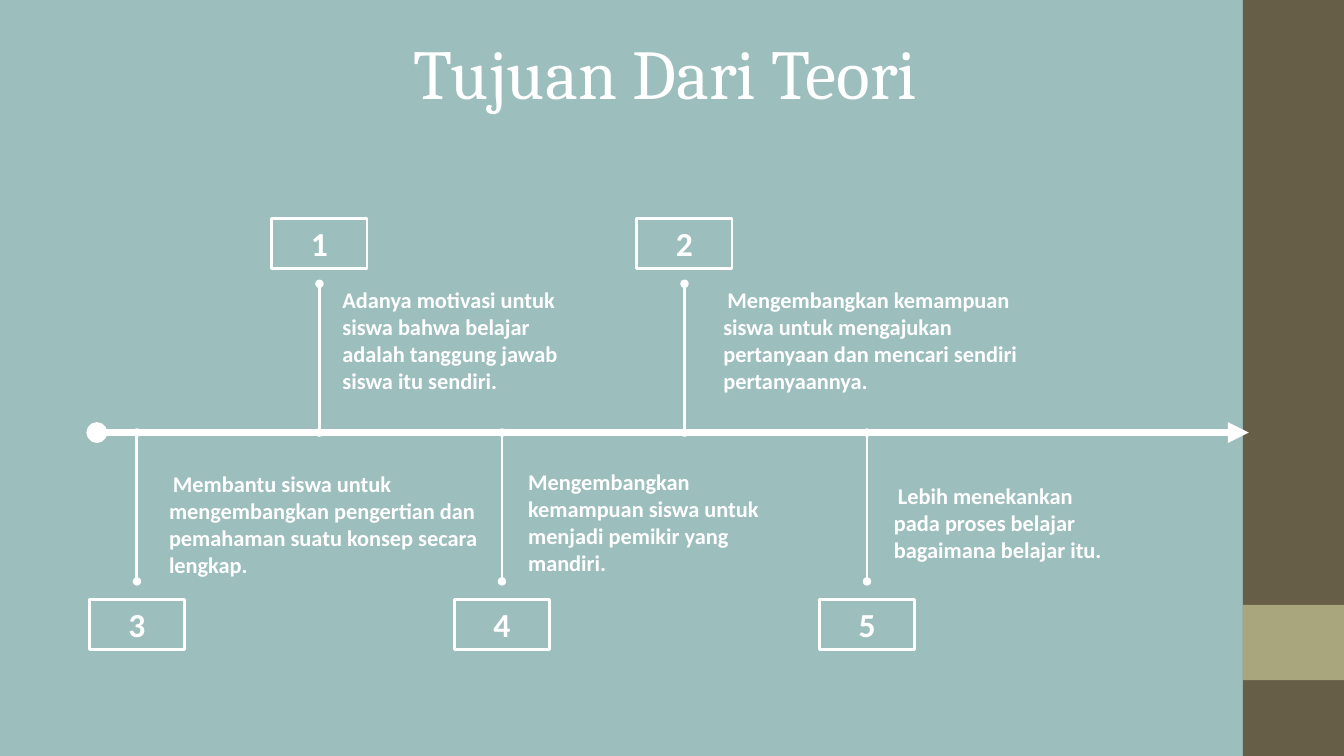
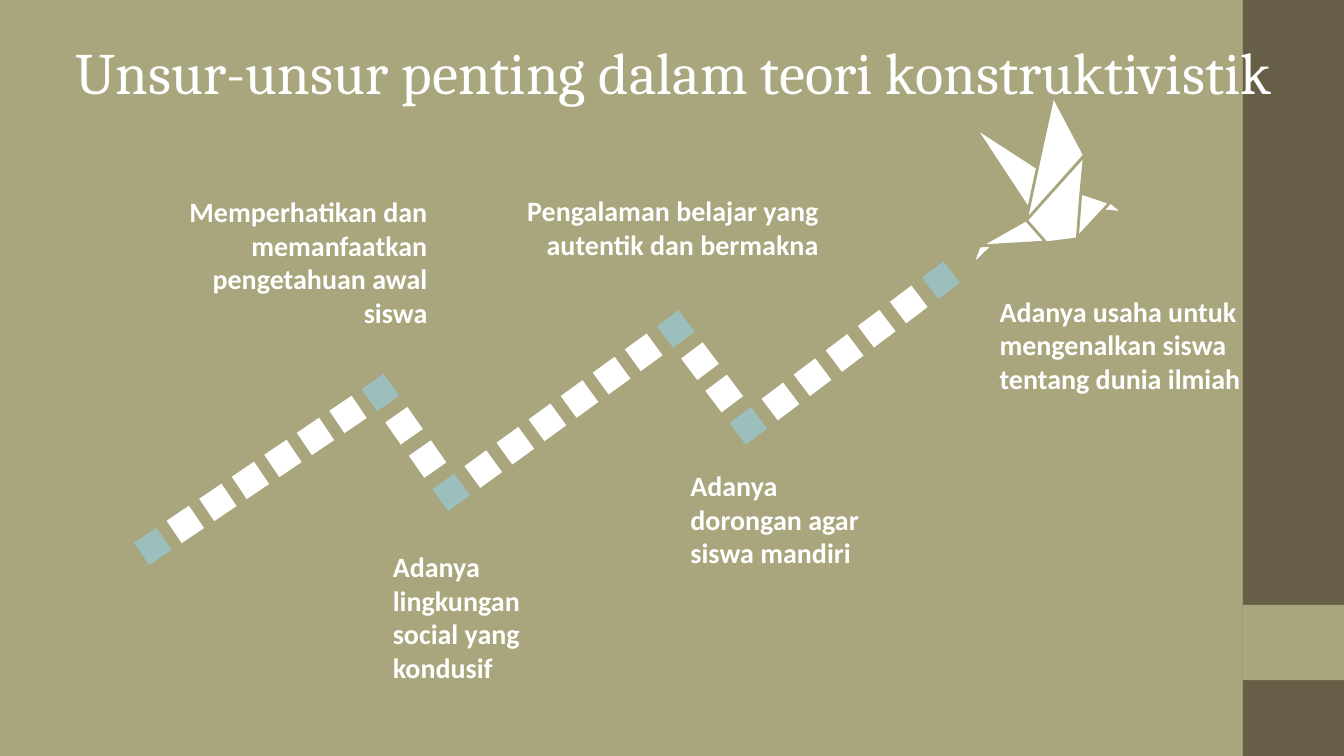
from lxml import etree
from pptx import Presentation
from pptx import util as u
from pptx.dml.color import RGBColor
from pptx.enum import shapes, text
from pptx.oxml.ns import qn

WHITE, TEAL, OLIVE, BROWN = "FFFFFF", "9CBEBD", "A9A57C", "675E47"
TITLE_FONT, BODY_FONT = "Cambria", "Calibri"
LEFT, CENTER, RIGHT = text.PP_ALIGN.LEFT, text.PP_ALIGN.CENTER, text.PP_ALIGN.RIGHT
TOP, MIDDLE = text.MSO_ANCHOR.TOP, text.MSO_ANCHOR.MIDDLE
RECTANGLE = shapes.MSO_SHAPE.RECTANGLE
WIDTH, HEIGHT = 33.87, 19.05


def color(hex_string):
    return RGBColor.from_string(hex_string)


class Deck:
    """Holds the shared style and the current slide; lengths are in cm."""

    def __init__(self):
        self.presentation = Presentation()
        self.presentation.slide_width = u.Cm(WIDTH)
        self.presentation.slide_height = u.Cm(HEIGHT)
        self.slide = None

    def new_slide(self, background, title, size):
        self.slide = self.presentation.slides.add_slide(self.presentation.slide_layouts[6])
        fill = self.slide.background.fill
        fill.solid()
        fill.fore_color.rgb = color(background)
        # Side band with its accent
        self.rectangle(31.32, 0, 2.55, HEIGHT, BROWN)
        self.rectangle(31.32, 15.24, 2.55, 1.9, OLIVE)
        self.textbox(0.89, 0.79, 32.16, 2, title, size, CENTER, MIDDLE,
                     font=TITLE_FONT, bold=False)

    def paint(self, shape, fill=None, line=None, weight=2):
        shape.shadow.inherit = False
        if fill:
            shape.fill.solid()
            shape.fill.fore_color.rgb = color(fill)
        else:
            shape.fill.background()
        if line:
            shape.line.color.rgb = color(line)
            shape.line.width = u.Pt(weight)
        else:
            shape.line.fill.background()

    def set_text(self, shape, content, size, align, anchor, font=BODY_FONT, bold=True):
        frame = shape.text_frame
        frame.word_wrap = True
        frame.vertical_anchor = anchor
        frame.text = content
        paragraph = frame.paragraphs[0]
        paragraph.alignment = align
        for run in paragraph.runs:
            run.font.name = font
            run.font.size = u.Pt(size)
            run.font.bold = bold
            run.font.color.rgb = color(WHITE)
        return paragraph

    def textbox(self, left, top, width, height, content, size, align=LEFT,
                anchor=TOP, indent=0, **style):
        box = self.slide.shapes.add_textbox(u.Cm(left), u.Cm(top), u.Cm(width), u.Cm(height))
        paragraph = self.set_text(box, content, size, align, anchor, **style)
        if indent:
            paragraph._p.get_or_add_pPr().set("indent", str(u.Cm(indent)))

    def rectangle(self, left, top, width, height, fill=None, line=None):
        shape = self.slide.shapes.add_shape(
            RECTANGLE, u.Cm(left), u.Cm(top), u.Cm(width), u.Cm(height))
        self.paint(shape, fill, line)
        return shape

    def number_box(self, center_x, top, number):
        width = 2.4
        box = self.rectangle(center_x - width / 2, top, width, 1.27, line=WHITE)
        self.set_text(box, str(number), 24, CENTER, MIDDLE)

    def line(self, x1, y1, x2, y2, weight, end="oval"):
        connector = self.slide.shapes.add_connector(
            shapes.MSO_CONNECTOR.STRAIGHT, u.Cm(x1), u.Cm(y1), u.Cm(x2), u.Cm(y2))
        connector.line.color.rgb = color(WHITE)
        connector.line.width = u.Pt(weight)
        properties = connector._element.spPr
        outline = properties.get_or_add_ln()
        for tag, kind in (("a:headEnd", "oval"), ("a:tailEnd", end)):
            etree.SubElement(outline, qn(tag), type=kind)
        etree.SubElement(properties, qn("a:effectLst"))

    def square(self, center_x, center_y, angle, fill):
        side = 0.68
        shape = self.rectangle(center_x - side / 2, center_y - side / 2, side, side, fill)
        shape.rotation = angle

    def polygon(self, points):
        corners = [(u.Cm(x), u.Cm(y)) for x, y in points]
        builder = self.slide.shapes.build_freeform(*corners[0])
        builder.add_line_segments(corners[1:], close=True)
        self.paint(builder.convert_to_shape(), WHITE, OLIVE)


def build_timeline(deck):
    deck.new_slide(TEAL, "Tujuan Dari Teori ", 50)
    axis_y, stem, first_x, step = 10.9, 3.75, 3.45, 4.6
    deck.line(2.44, axis_y, 31.47, axis_y, 5, end="triangle")

    # Steps from left to right: number, text box, first-line indent, wording
    steps = [
        (3, (4.01, 11.71, 8.66, 3), 0.1,
         "Membantu siswa untuk mengembangkan pengertian dan pemahaman suatu konsep secara lengkap."),
        (1, (8.38, 6.73, 6.35, 3.68), 0,
         "Adanya motivasi untuk siswa bahwa belajar adalah tanggung jawab siswa itu sendiri."),
        (4, (13.06, 11.66, 6.81, 3), 0,
         "Mengembangkan kemampuan siswa untuk menjadi pemikir yang mandiri."),
        (2, (17.98, 6.73, 8.18, 3.68), 0.1,
         "Mengembangkan kemampuan siswa untuk mengajukan pertanyaan dan mencari sendiri pertanyaannya."),
        (5, (22.28, 11.66, 5.82, 3), 0.1,
         "Lebih menekankan pada proses belajar bagaimana belajar itu."),
    ]
    for index, (number, place, indent, wording) in enumerate(steps):
        x = first_x + index * step
        above = index % 2 == 1
        deck.line(x, axis_y, x, axis_y - stem if above else axis_y + stem, 2)
        deck.number_box(x, 5.5 if above else 15.1, number)
        deck.textbox(*place, wording, 16, anchor=MIDDLE, indent=indent)


def build_trail(deck):
    deck.new_slide(OLIVE, "Unsur-unsur penting dalam teori konstruktivistik", 41.9)

    # Elements along the trail
    elements = [
        (3.76, 4.78, 7.26, 3.68, RIGHT, "Memperhatikan dan memanfaatkan pengetahuan awal siswa"),
        (12.17, 4.75, 8.71, 2.82, RIGHT, "Pengalaman belajar yang autentik dan bermakna"),
        (9.65, 13.72, 5.33, 3.68, LEFT, "Adanya lingkungan social yang kondusif"),
        (17.15, 11.68, 5.33, 3.68, LEFT, "Adanya dorongan agar siswa mandiri"),
        (24.94, 7.29, 6.91, 4.52, LEFT, "Adanya usaha untuk mengenalkan siswa tentang dunia ilmiah"),
    ]
    for left, top, width, height, align, wording in elements:
        deck.textbox(left, top, width, height, wording, 20, align)

    # Zigzag of squares: teal turning points, white ones evenly between
    turns = [(3.85, 13.77), (9.59, 9.89), (11.37, 12.41),
             (17.03, 8.29), (18.86, 10.73), (23.71, 7.06)]
    legs = [(7, 56), (3, 55), (7, 54), (3, 53), (6, 53)]  # steps, angle
    for (x1, y1), (x2, y2), (count, angle) in zip(turns, turns[1:], legs):
        for index in range(count):
            part = index / count
            deck.square(x1 + (x2 - x1) * part, y1 + (y2 - y1) * part, angle,
                        WHITE if index else TEAL)
    deck.square(*turns[-1], legs[-1][1], TEAL)

    # Folded paper bird
    bird = {
        "tail tip": [(25.1, 6.12), (24.49, 6.71), (24.69, 6.17)],
        "tail": [(24.69, 6.2), (25.91, 5.51), (26.37, 6.1)],
        "beak": [(27.97, 5.08), (28.32, 5.36), (27.76, 5.31)],
        "head": [(27.2, 4.85), (27.97, 5.11), (27.13, 6.02)],
        "far wing": [(24.56, 3.2), (26.21, 4.27), (25.93, 5.28)],
        "body": [(26.37, 6.12), (27.15, 6.02), (27.23, 4.97), (27.33, 3.91), (25.86, 5.54)],
        "near wing": [(27.33, 3.91), (26.54, 2.41), (26.2, 3.98), (25.86, 5.56)],
    }
    for points in bird.values():
        deck.polygon(points)


def main():
    deck = Deck()
    build_timeline(deck)
    build_trail(deck)
    deck.presentation.save("out.pptx")


if __name__ == "__main__":
    main()
